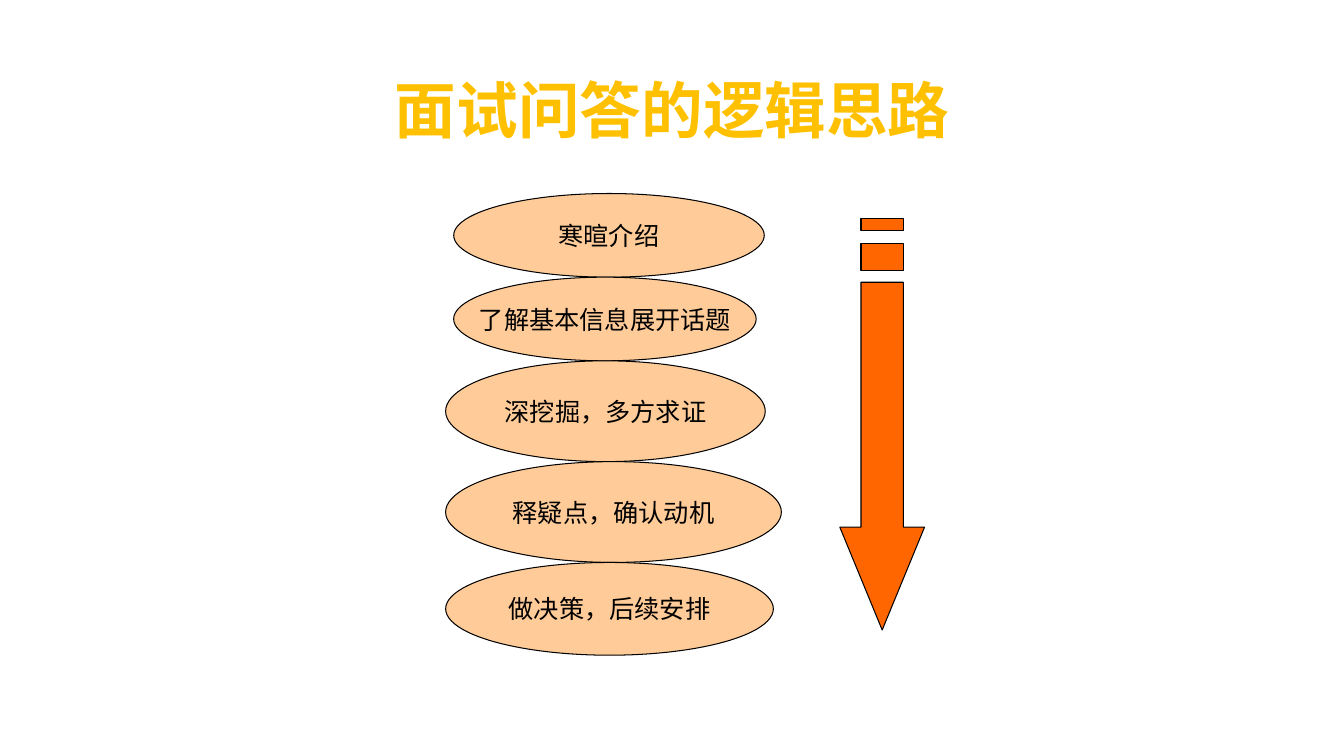
from lxml import etree
from pptx import Presentation
from pptx.dml.color import RGBColor
from pptx.enum.shapes import MSO_SHAPE
from pptx.enum.text import MSO_ANCHOR, PP_ALIGN
from pptx.oxml.ns import qn
from pptx.util import Inches, Pt

OVAL = MSO_SHAPE.OVAL
MIDDLE = MSO_ANCHOR.MIDDLE
CENTER = PP_ALIGN.CENTER


def color(code):
    """Turn a hex string into a colour."""
    return RGBColor.from_string(code)


class Deck:
    """Hold the style and the current slide."""

    face = "Noto Sans CJK SC"
    gold = "FFC000"
    peach = "FFCC99"
    orange = "FF6600"
    black = "000000"

    def __init__(self, show):
        """Add a title-only slide to the show."""
        self.slide = show.slides.add_slide(show.slide_layouts[5])

    def label(self, shape, text, size, ink, bold=False, wrap=True):
        """Put one centred line of text in a shape."""
        frame = shape.text_frame
        frame.text = text
        frame.word_wrap = wrap
        frame.vertical_anchor = MIDDLE
        para = frame.paragraphs[0]
        para.alignment = CENTER
        font = para.font
        font.size = Pt(size)
        font.bold = bold
        font.color.rgb = color(ink)
        font.name = self.face
        props = para._p.find(qn("a:pPr")).find(qn("a:defRPr"))
        etree.SubElement(props, qn("a:ea")).set("typeface", self.face)
        return para

    def paint(self, shape, fill):
        """Give a shape its fill and thin black outline."""
        shape.shadow.inherit = False
        shape.fill.solid()
        shape.fill.fore_color.rgb = color(fill)
        shape.line.color.rgb = color(self.black)
        shape.line.width = Pt(0.75)

    def title(self, text, left, top, width, height):
        """Place and fill the title."""
        shape = self.slide.shapes.title
        shape.left, shape.top = Inches(left), Inches(top)
        shape.width, shape.height = Inches(width), Inches(height)
        para = self.label(shape, text, 44, self.gold, bold=True)
        para.line_spacing = 0.9

    def oval(self, text, left, top, width, height):
        """Draw one labelled step."""
        box = [Inches(n) for n in (left, top, width, height)]
        shape = self.slide.shapes.add_shape(OVAL, *box)
        self.paint(shape, self.peach)
        self.label(shape, text, 18, self.black, wrap=False)

    def outline(self, parts, fill):
        """Draw several closed outlines as one shape."""
        pen = None
        for part in parts:
            first, *rest = [(Inches(x), Inches(y)) for x, y in part]
            if pen is None:
                pen = self.slide.shapes.build_freeform(*first)
            else:
                pen.move_to(*first)
            pen.add_line_segments(rest, close=True)
        self.paint(pen.convert_to_shape(), fill)

    def arrow(self, mid, stripes, top, neck, tip):
        """Draw a striped arrow that points down."""
        half, wing = 0.21, 0.42
        left, right = mid - half, mid + half
        head = [(mid + wing, neck), (right, neck), (right, top), (left, top),
                (left, neck), (mid - wing, neck), (mid, tip)]
        bars = [[(right, high), (left, high), (left, low), (right, low)]
                for high, low in stripes]
        self.outline([head] + bars, self.orange)


def main():
    """Build and save the slide."""
    show = Presentation()
    show.slide_width, show.slide_height = Inches(13.33), Inches(7.5)
    deck = Deck(show)
    deck.title("面试问答的逻辑思路", 0.92, 0.4, 11.5, 1.45)
    steps = [
        ("寒暄介绍", 4.5, 3.08, 0.83),
        ("了解基本信息展开话题", 4.5, 3, 0.83),
        ("深挖掘，多方求证", 4.42, 3.17, 1),
        ("释疑点，确认动机", 4.42, 3.33, 1),
        ("做决策，后续安排", 4.42, 3.25, 0.92),
    ]
    top = 1.92
    for text, left, width, height in steps:
        deck.oval(text, left, top, width, height)
        top += height
    deck.arrow(8.75, [(2.42, 2.68), (2.17, 2.29)], 2.8, 5.23, 6.25)
    show.save("out.pptx")


if __name__ == "__main__":
    main()
